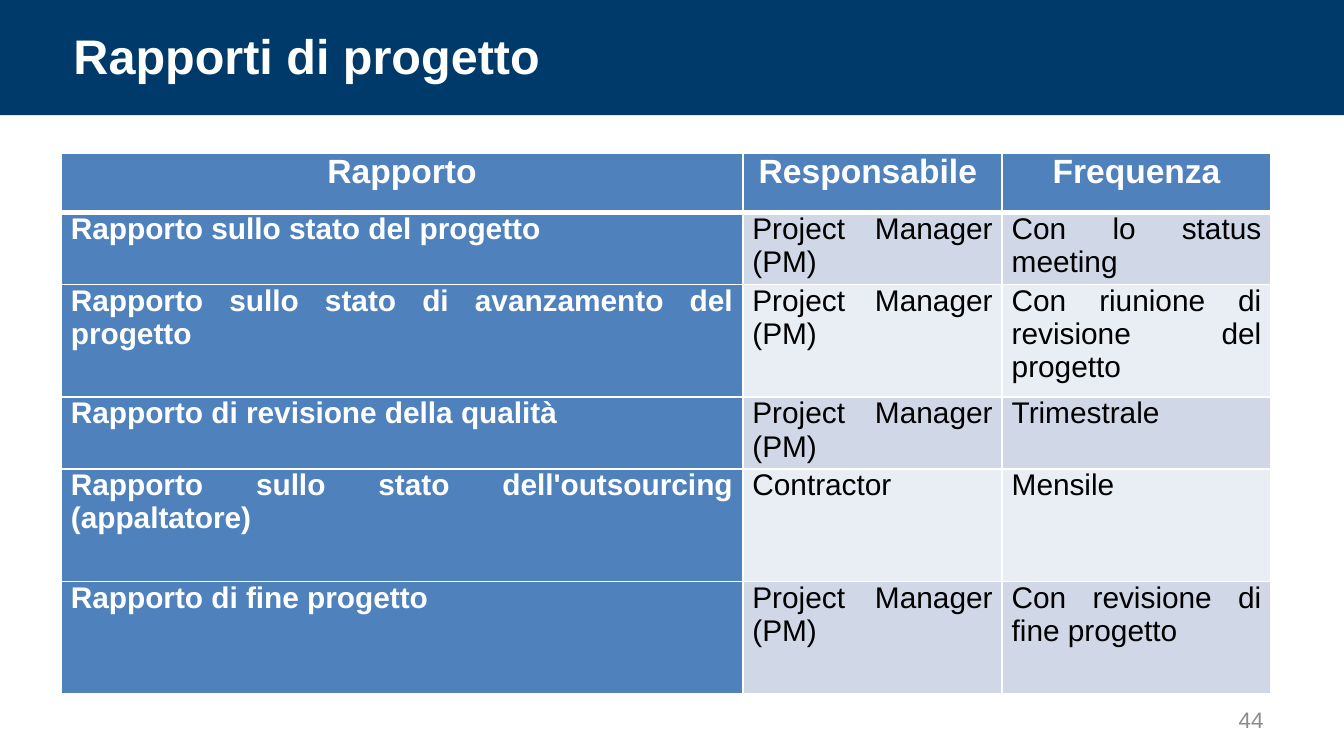
from lxml import etree
from pptx import Presentation
from pptx.dml.color import RGBColor
from pptx.enum.shapes import MSO_SHAPE
from pptx.enum.text import MSO_ANCHOR, PP_ALIGN
from pptx.oxml.ns import qn
from pptx.util import Cm, Pt

RECT = MSO_SHAPE.RECTANGLE
MIDDLE = MSO_ANCHOR.MIDDLE
LEFT, CENTER, RIGHT = PP_ALIGN.LEFT, PP_ALIGN.CENTER, PP_ALIGN.RIGHT
JUSTIFY = PP_ALIGN.JUSTIFY

FONT = "Arial"
COLORS = {
    "navy": "003A6A",
    "blue": "4F81BD",
    "odd": "D0D8E8",
    "even": "E9EDF4",
    "white": "FFFFFF",
    "black": "000000",
    "gray": "8C8C8C",
}
WIDTHS = [12.88, 4.9, 5.08]
HEIGHTS = [1.12, 1.07, 2.13, 1.07, 2.13, 2.13]
PM = "Project Manager (PM)"
ROWS = [
    ("Rapporto", "Responsabile ", "Frequenza"),
    ("Rapporto sullo stato del progetto", PM, "Con lo status meeting"),
    ("Rapporto sullo stato di avanzamento del progetto", PM,
     "Con riunione di revisione del progetto"),
    ("Rapporto di revisione della qualità", PM, "Trimestrale"),
    ("Rapporto sullo stato dell'outsourcing (appaltatore)", "Contractor",
     "Mensile"),
    ("Rapporto di fine progetto", PM, "Con revisione di fine progetto"),
]


def rgb(name):
    return RGBColor.from_string(COLORS[name])


def write(frame, text, size, color, bold=False, align=LEFT):
    para = frame.paragraphs[0]
    para.alignment = align
    run = para.add_run()
    run.text = text
    font = run.font
    font.name, font.size, font.bold = FONT, Pt(size), bold
    font.color.rgb = rgb(color)


def add_band(slide, width):
    band = slide.shapes.add_shape(RECT, 0, 0, width, Cm(2.18))
    band.shadow.inherit = False
    band.fill.solid()
    band.fill.fore_color.rgb = rgb("navy")
    band.line.fill.background()


def add_label(slide, box, text, size, color, bold=False, align=LEFT):
    label = slide.shapes.add_textbox(*(Cm(n) for n in box))
    frame = label.text_frame
    frame.word_wrap = True
    frame.vertical_anchor = MIDDLE
    frame.margin_top = frame.margin_bottom = 0
    write(frame, text, size, color, bold, align)


def set_edges(cell, bottom):
    """Draw white cell borders; bottom is the lower edge's width in points."""
    props = cell._tc.get_or_add_tcPr()
    edges = [("L", 1), ("R", 1), ("T", 1), ("B", bottom)]
    for place, (side, width) in enumerate(edges):
        line = etree.Element(qn(f"a:ln{side}"), w=str(Pt(width)))
        fill = etree.SubElement(line, qn("a:solidFill"))
        etree.SubElement(fill, qn("a:srgbClr"), val=COLORS["white"])
        props.insert(place, line)


def fill_cell(cell, text, row, col):
    head = row == 0
    key = head or col == 0
    shade = "blue" if key else ("odd" if row % 2 else "even")
    cell.fill.solid()
    cell.fill.fore_color.rgb = rgb(shade)
    cell.margin_left = cell.margin_right = Cm(0.18)
    cell.margin_top = cell.margin_bottom = 0
    write(cell.text_frame, text, 18 if head else 16,
          "white" if key else "black", key, CENTER if head else JUSTIFY)
    set_edges(cell, 3 if head else 1)


def add_grid(slide):
    frame = slide.shapes.add_table(
        len(ROWS), len(WIDTHS), Cm(1.16), Cm(2.9),
        Cm(sum(WIDTHS)), Cm(sum(HEIGHTS)))
    table = frame.table
    for col, width in zip(table.columns, WIDTHS):
        col.width = Cm(width)
    for row, height in zip(table.rows, HEIGHTS):
        row.height = Cm(height)
    for row, texts in enumerate(ROWS):
        for col, text in enumerate(texts):
            fill_cell(table.cell(row, col), text, row, col)


def main():
    deck = Presentation()
    deck.slide_width, deck.slide_height = Cm(25.4), Cm(14.29)
    slide = deck.slides.add_slide(deck.slide_layouts[6])
    add_band(slide, deck.slide_width)
    add_label(slide, (1.14, 0.48, 22.86, 1.12), "Rapporti di progetto",
              26, "white", bold=True)
    add_label(slide, (22.61, 13.23, 1.52, 0.76), "44", 12, "gray",
              align=RIGHT)
    add_grid(slide)
    deck.save("out.pptx")


if __name__ == "__main__":
    main()
